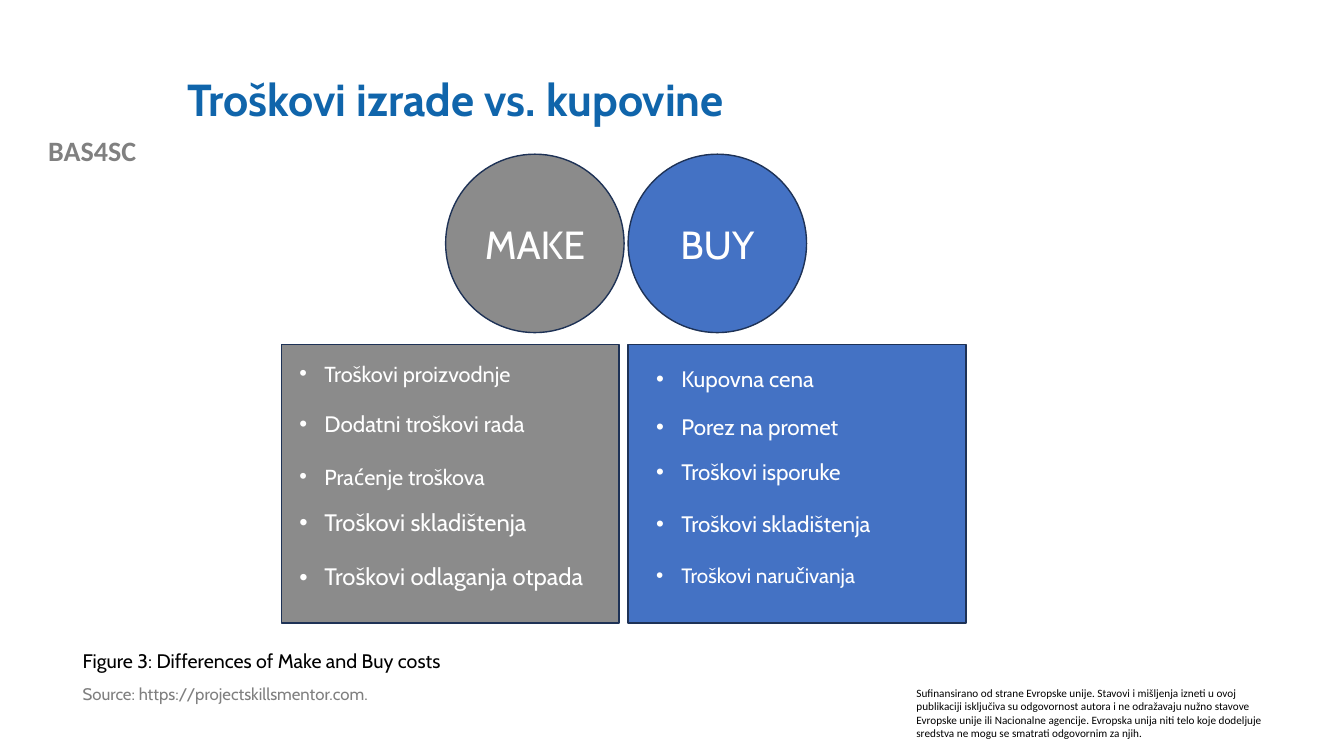
import pptx
import pptx.util
import pptx.dml.color
import pptx.enum.shapes
import pptx.enum.text
import pptx.oxml.ns
from lxml import etree

Inches = pptx.util.Inches
Pt = pptx.util.Pt
Align = pptx.enum.text.PP_ALIGN
Anchor = pptx.enum.text.MSO_ANCHOR
Preset = pptx.enum.shapes.MSO_SHAPE

WHITE, BLACK, GREY, BLUE = "FFFFFF", "000000", "8B8B8B", "4472C4"
OUTLINE = "1E3256"

MAKE_COSTS = [
    ("Troškovi proizvodnje", 0.18, 15.5, 0.7),
    ("Dodatni troškovi rada", 0.63, 16, 0.9),
    ("Praćenje troškova", 1.2, 15.5, 0.7),
    ("Troškovi skladištenja", 1.6, 17, 0.9),
    ("Troškovi odlaganja otpada", 2.14, 17, 0.9),
]
BUY_COSTS = [
    ("Kupovna cena", 0.18, 16, 0.9),
    ("Porez na promet", 0.66, 16, 0.9),
    ("Troškovi isporuke", 1.11, 16, 0.9),
    ("Troškovi skladištenja", 1.62, 16, 0.9),
    ("Troškovi naručivanja", 2.14, 14.8, 0.9),
]
DISCLAIMER = (
    "Sufinansirano od strane Evropske unije. Stavovi i mišljenja izneti u ovoj "
    "publikaciji isključiva su odgovornost autora i ne odražavaju nužno stavove "
    "Evropske unije ili Nacionalne agencije. Evropska unija niti telo koje dodeljuje "
    "sredstva ne mogu se smatrati odgovornim za njih."
)


def color(value):
    return pptx.dml.color.RGBColor.from_string(value)


def add_bullet(para, value):
    properties = para._p.get_or_add_pPr()
    properties.set("marL", str(Inches(0.25)))
    properties.set("indent", str(-Inches(0.25)))
    qualified = pptx.oxml.ns.qn
    tint = etree.SubElement(properties, qualified("a:buClr"))
    etree.SubElement(tint, qualified("a:srgbClr"), val=value)
    etree.SubElement(properties, qualified("a:buFont"), typeface="Arial")
    etree.SubElement(properties, qualified("a:buChar"), char="•")


def write(box, text, size=16, font="Cabin", fill=BLACK, bold=False,
          align=Align.LEFT, anchor=Anchor.TOP, spacing=1.0, bullet=False):
    frame = box.text_frame
    frame.word_wrap = True
    frame.auto_size = pptx.enum.text.MSO_AUTO_SIZE.NONE
    frame.vertical_anchor = anchor
    para = frame.paragraphs[0]
    para.alignment = align
    para.line_spacing = spacing
    if bullet:
        add_bullet(para, fill)
    span = para.add_run()
    span.text = text
    span.font.size = Pt(size)
    span.font.name = font
    span.font.bold = bold
    span.font.color.rgb = color(fill)


def add_text(page, left, top, width, height, text, **style):
    box = page.shapes.add_textbox(Inches(left), Inches(top), Inches(width), Inches(height))
    write(box, text, **style)


def add_panel(page, preset, left, top, width, height, fill):
    panel = page.shapes.add_shape(
        preset, Inches(left), Inches(top), Inches(width), Inches(height))
    panel.shadow.inherit = False
    panel.fill.solid()
    panel.fill.fore_color.rgb = color(fill)
    panel.line.color.rgb = color(OUTLINE)
    panel.line.width = Pt(1)
    return panel


def add_title(page, left, top, width, height):
    title = page.shapes.title
    title.left, title.top = Inches(left), Inches(top)
    title.width, title.height = Inches(width), Inches(height)
    write(title, "Troškovi izrade vs. kupovine", size=32, fill="1065AB",
          bold=True, anchor=Anchor.MIDDLE, spacing=0.9)


def add_option(page, left, top, width, height, label, circle_left, fill, costs, inset):
    diameter = 1.77
    circle = add_panel(page, Preset.OVAL, circle_left, top, diameter, diameter, fill)
    write(circle, label, size=28, fill=WHITE, align=Align.CENTER, anchor=Anchor.MIDDLE)
    list_height = 2.76
    list_top = top + height - list_height
    add_panel(page, Preset.RECTANGLE, left, list_top, width, list_height, fill)
    for text, offset, size, spacing in costs:
        add_text(page, left + inset, list_top + offset, width - inset, 0.48, text,
                 size=size, fill=WHITE, align=Align.JUSTIFY, spacing=spacing, bullet=True)


def add_caption(page, left, top, width):
    add_text(page, left, top, width, 0.34,
             "Figure 3: Differences of Make and Buy costs", size=14)
    add_text(page, left, top + 0.37, width, 0.52,
             "Source: https://projectskillsmentor.com.", size=12, fill="7F7F7F", spacing=0.9)


def add_project_marks(page):
    add_text(page, 0, 1.28, 1.83, 0.44, "BAS4SC", size=20, font="Calibri",
             fill="808080", bold=True, align=Align.CENTER)
    add_text(page, 8.99, 6.76, 3.68, 0.64, DISCLAIMER, size=8, font="Calibri")


def main():
    deck = pptx.Presentation()
    deck.slide_width, deck.slide_height = Inches(13.33), Inches(7.5)
    page = deck.slides.add_slide(deck.slide_layouts.get_by_name("Title Only"))
    add_project_marks(page)
    add_title(page, 1.76, 0.4, 10.66, 1.22)
    add_option(page, 2.79, 1.53, 3.35, 4.65, "MAKE", 4.42, GREY, MAKE_COSTS, 0.08)
    add_option(page, 6.23, 1.53, 3.35, 4.65, "BUY", 6.23, BLUE, BUY_COSTS, 0.18)
    add_caption(page, 0.72, 6.39, 5.01)
    deck.save("out.pptx")


if __name__ == "__main__":
    main()
